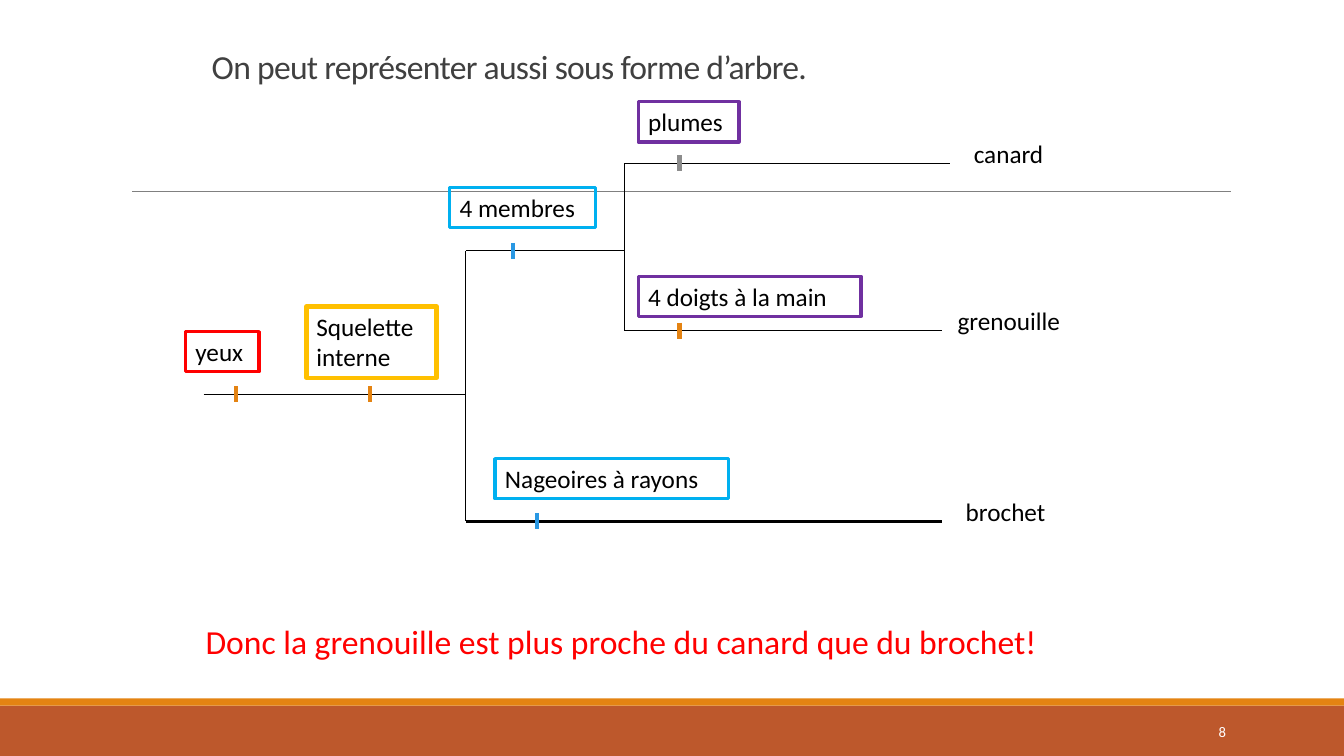
import pptx
import pptx.util
import pptx.dml.color
import pptx.enum.shapes
import pptx.enum.text
import pptx.oxml.ns
from collections import namedtuple
from lxml import etree

Inches = pptx.util.Inches
Pt = pptx.util.Pt
RGBColor = pptx.dml.color.RGBColor
PP_ALIGN = pptx.enum.text.PP_ALIGN
MSO_ANCHOR = pptx.enum.text.MSO_ANCHOR
qn = pptx.oxml.ns.qn

BLACK = RGBColor(0, 0, 0)
WHITE = RGBColor(255, 255, 255)
DARK_GREY = RGBColor(0x40, 0x40, 0x40)
RULE_GREY = RGBColor(0x80, 0x80, 0x80)
MARK_GREY = RGBColor(0x8C, 0x8C, 0x8C)
BRICK = RGBColor(0xBD, 0x58, 0x2C)
ORANGE = RGBColor(0xE4, 0x83, 0x12)
BLUE = RGBColor(0x29, 0x98, 0xE3)
RED = RGBColor(0xFF, 0, 0)
GOLD = RGBColor(0xFF, 0xC0, 0)
CYAN = RGBColor(0, 0xB0, 0xF0)
PURPLE = RGBColor(0x70, 0x30, 0xA0)

Box = namedtuple("Box", "left top width height")


def inside(box, left, top, width, height):
    return Box(box.left + left, box.top + top, width, height)


def write(shape, text, size, color, align=PP_ALIGN.LEFT, anchor=MSO_ANCHOR.TOP):
    frame = shape.text_frame
    frame.text = text
    frame.word_wrap = True
    frame.auto_size = pptx.enum.text.MSO_AUTO_SIZE.NONE
    frame.vertical_anchor = anchor
    for paragraph in frame.paragraphs:
        paragraph.alignment = align
        for run in paragraph.runs:
            run.font.name = "Calibri"
            run.font.size = Pt(size)
            run.font.color.rgb = color


def add_label(slide, box, text, size, color, **layout):
    label = slide.shapes.add_textbox(*map(Inches, box))
    write(label, text, size, color, **layout)
    return label


def add_line(slide, box, x1, y1, x2, y2, color, width):
    line = slide.shapes.add_connector(
        pptx.enum.shapes.MSO_CONNECTOR.STRAIGHT,
        Inches(box.left + x1), Inches(box.top + y1),
        Inches(box.left + x2), Inches(box.top + y2))
    line.line.color.rgb = color
    line.line.width = Pt(width)
    etree.SubElement(line.element.spPr, qn("a:effectLst"))


def add_footer(slide, box):
    edge_height = 0.07
    bands = [(0, box.height, BRICK), (-edge_height, edge_height, ORANGE)]
    for top, height, color in bands:
        band = slide.shapes.add_shape(
            pptx.enum.shapes.MSO_SHAPE.RECTANGLE,
            *map(Inches, inside(box, 0, top, box.width, height)))
        band.shadow.inherit = False
        band.fill.solid()
        band.fill.fore_color.rgb = color
        band.line.fill.background()
    add_label(slide, inside(box, 10.83, 0.06, 1.43, 0.4), "8", 10.5, WHITE,
              align=PP_ALIGN.RIGHT, anchor=MSO_ANCHOR.MIDDLE)


def add_title(slide, box):
    title = slide.shapes.title
    title.left, title.top, title.width, title.height = map(Inches, box)
    write(title, "On peut représenter aussi sous forme d’arbre.", 24, DARK_GREY,
          anchor=MSO_ANCHOR.BOTTOM)
    title.text_frame.paragraphs[0].line_spacing = 0.85
    for properties in title.element.iter(qn("a:rPr")):
        properties.set("spc", "-50")


def add_tree(slide, box):
    root_x, first_fork, second_fork = 0.22, 2.82, 4.39
    root_y, limbs_y, duck_y, frog_y, pike_y = 2.91, 1.49, 0.62, 2.28, 4.17
    duck_end, tip = 7.62, 7.54
    half_mark = 0.08

    branches = [
        (root_x, root_y, 2.27, root_y, 0.75),
        (2.27, root_y, first_fork, root_y, 0.75),
        (first_fork, limbs_y, first_fork, pike_y, 0.75),
        (first_fork, limbs_y, second_fork, limbs_y, 0.75),
        (second_fork, duck_y, second_fork, frog_y, 0.75),
        (second_fork, duck_y, duck_end, duck_y, 0.75),
        (second_fork, frog_y, tip, frog_y, 0.75),
        (first_fork, pike_y, tip, pike_y, 2.25),
    ]
    for x1, y1, x2, y2, width in branches:
        add_line(slide, box, x1, y1, x2, y2, BLACK, width)

    characters = [
        ("yeux", 0.54, root_y, ORANGE, (0.04, 2.29, 0.73, 0.4), RED, 2.25),
        ("Squelette\ninterne", 1.87, root_y, ORANGE, (1.24, 2.04, 1.29, 0.71), GOLD, 3),
        ("Nageoires à rayons", 3.53, pike_y, BLUE, (3.11, 3.55, 2.32, 0.4), CYAN, 2.25),
        ("4 membres", 3.29, limbs_y, BLUE, (2.66, 0.86, 1.45, 0.4), CYAN, 2.25),
        ("plumes", 4.94, duck_y, MARK_GREY, (4.53, 0.01, 1, 0.4), PURPLE, 2.25),
        ("4 doigts à la main", 4.94, frog_y, ORANGE, (4.53, 1.74, 2.21, 0.4), PURPLE, 2.25),
    ]
    for text, x, y, mark_color, place, border, width in characters:
        add_line(slide, box, x, y - half_mark, x, y + half_mark, mark_color, 3)
        character = add_label(slide, inside(box, *place), text, 18, BLACK)
        character.line.color.rgb = border
        character.line.width = Pt(width)

    species = [
        ("canard", 7.76, duck_y, 0.97),
        ("grenouille", 7.6, frog_y, 1.33),
        ("brochet", 7.68, pike_y, 1.08),
    ]
    for name, left, y, width in species:
        add_label(slide, inside(box, left, y - 0.3, width, 0.4), name, 18, BLACK)


def add_conclusion(slide, box):
    add_label(slide, box,
              "Donc la grenouille est plus proche du canard que du brochet!", 24, RED)


def main():
    presentation = pptx.Presentation()
    presentation.slide_width = Inches(13.33)
    presentation.slide_height = Inches(7.5)
    slide = presentation.slides.add_slide(presentation.slide_layouts[5])
    add_footer(slide, Box(0, 7, 13.33, 0.5))
    add_line(slide, Box(1.31, 1.9, 10.9, 0), 0, 0, 10.9, 0, RULE_GREY, 0.5)
    add_title(slide, Box(2, 0.25, 9.34, 0.66))
    add_tree(slide, Box(1.8, 1, 8.93, 4.27))
    add_conclusion(slide, Box(1.94, 6.11, 9.46, 0.5))
    presentation.save("out.pptx")


if __name__ == "__main__":
    main()
